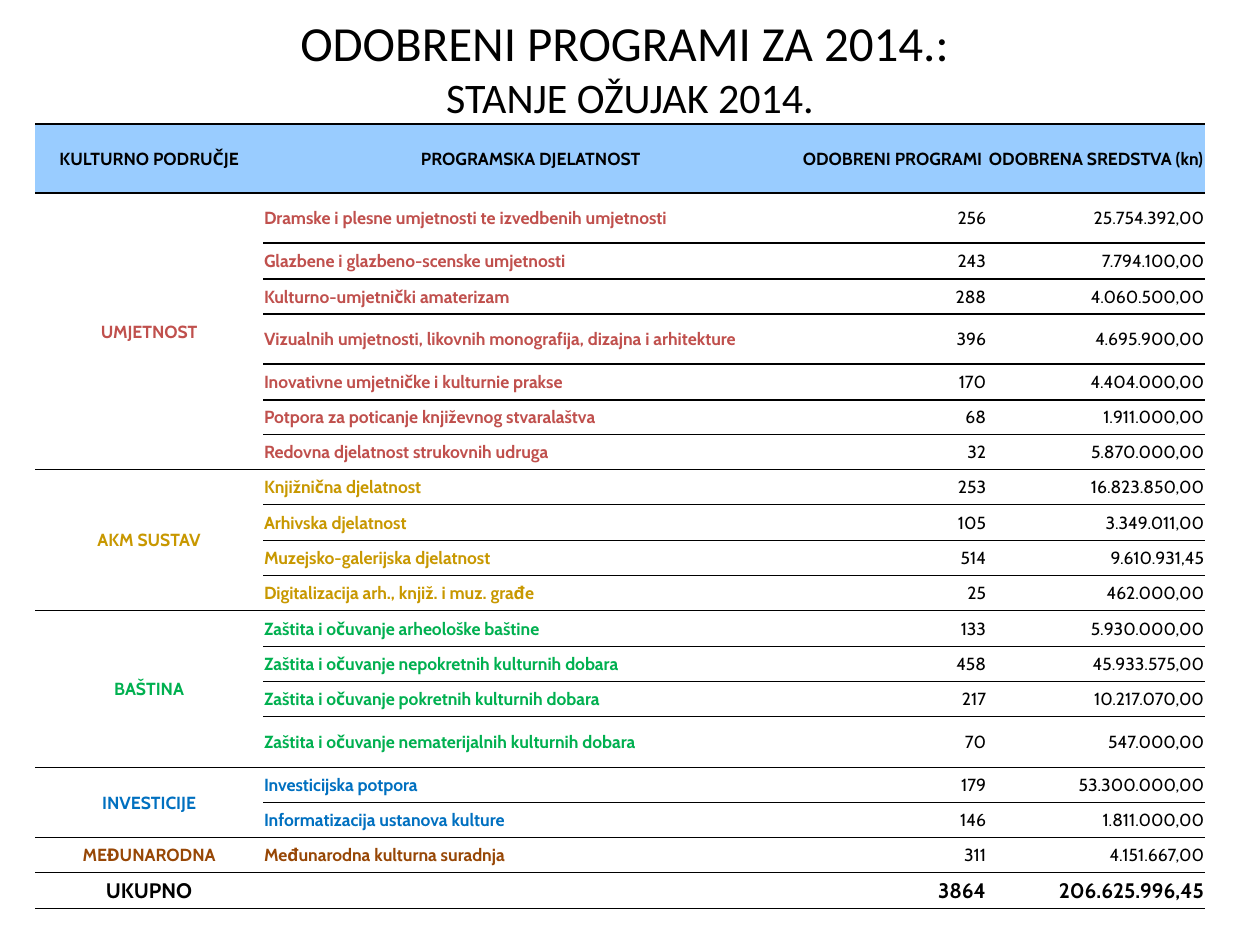
from lxml.etree import SubElement
from pptx import Presentation
from pptx.dml.color import RGBColor
from pptx.enum.text import MSO_ANCHOR as Anchor, MSO_AUTO_SIZE as AutoSize, PP_ALIGN as Align
from pptx.oxml.ns import qn
from pptx.util import Emu, Pt

EMU_PER_PX = 914400 / 126
COLORS = {
    "text": "000000", "header": "99CCFF", "art": "C0504D", "archive": "C89800",
    "heritage": "00B050", "investment": "0070C0", "international": "974706",
}
TITLE = [("ODOBRENI PROGRAMI ZA 2014.: ", 28), ("STANJE OŽUJAK 2014.", 24)]
HEADERS = ["KULTURNO PODRUČJE", "PROGRAMSKA DJELATNOST", "ODOBRENI PROGRAMI",
           "ODOBRENA SREDSTVA (kn)"]
# Area, colour, and its rows of activity, programmes and funds
AREAS = [
    ("UMJETNOST", "art", [
        ("Dramske i plesne umjetnosti te izvedbenih umjetnosti", "256", "25.754.392,00"),
        ("Glazbene i glazbeno-scenske umjetnosti", "243", "7.794.100,00"),
        ("Kulturno-umjetnički amaterizam", "288", "4.060.500,00"),
        ("Vizualnih umjetnosti, likovnih monografija, dizajna i arhitekture",
         "396", "4.695.900,00"),
        ("Inovativne umjetničke i kulturnie prakse", "170", "4.404.000,00"),
        ("Potpora za poticanje književnog stvaralaštva", "68", "1.911.000,00"),
        ("Redovna djelatnost strukovnih udruga", "32", "5.870.000,00"),
    ]),
    ("AKM SUSTAV", "archive", [
        ("Knjižnična djelatnost", "253", "16.823.850,00"),
        ("Arhivska djelatnost", "105", "3.349.011,00"),
        ("Muzejsko-galerijska djelatnost", "514", "9.610.931,45"),
        ("Digitalizacija arh., knjiž. i muz. građe", "25", "462.000,00"),
    ]),
    ("BAŠTINA", "heritage", [
        ("Zaštita i očuvanje arheološke baštine", "133", "5.930.000,00"),
        ("Zaštita i očuvanje nepokretnih kulturnih dobara", "458", "45.933.575,00"),
        ("Zaštita i očuvanje pokretnih kulturnih dobara", "217", "10.217.070,00"),
        ("Zaštita i očuvanje nematerijalnih kulturnih dobara", "70", "547.000,00"),
    ]),
    ("INVESTICIJE", "investment", [
        ("Investicijska potpora", "179", "53.300.000,00"),
        ("Informatizacija ustanova kulture", "146", "1.811.000,00"),
    ]),
    ("MEĐUNARODNA", "international", [
        ("Međunarodna kulturna suradnja", "311", "4.151.667,00"),
    ]),
]
TOTALS = ["UKUPNO", "", "3864", "206.625.996,45"]
COLUMN_EDGES = [35, 263, 798, 987, 1205]
ROW_EDGES = [124, 193, 243, 279, 314, 364, 400, 435, 470, 505, 541,
             576, 611, 647, 682, 717, 768, 803, 838, 873, 909]
ALIGNMENTS = [Align.CENTER, Align.LEFT, Align.RIGHT, Align.RIGHT]


def px(length):
    return Emu(round(length * EMU_PER_PX))


def gaps(edges):
    return [end - start for start, end in zip(edges, edges[1:])]


class SlideBuilder:
    title_font = "Calibri"
    table_font = "Cabin"

    def __init__(self, slide):
        self.slide = slide

    def set_text(self, paragraph, text, size, font, color="text", bold=False,
                 align=Align.CENTER):
        paragraph.text = text
        paragraph.alignment = align
        paragraph.font.name = font
        paragraph.font.size = Pt(size)
        paragraph.font.bold = bold
        paragraph.font.color.rgb = RGBColor.from_string(COLORS[color])

    def title(self, lines, left, top, width, height):
        box = self.slide.shapes.add_textbox(px(left), px(top), px(width), px(height))
        frame = box.text_frame
        frame.word_wrap = True
        frame.auto_size = AutoSize.SHAPE_TO_FIT_TEXT
        for index, (text, size) in enumerate(lines):
            paragraph = frame.add_paragraph() if index else frame.paragraphs[0]
            self.set_text(paragraph, text, size, self.title_font)

    def table(self, column_edges, row_edges):
        widths, heights = gaps(column_edges), gaps(row_edges)
        table = self.slide.shapes.add_table(
            len(heights), len(widths), px(column_edges[0]), px(row_edges[0]),
            px(sum(widths)), px(sum(heights))).table
        table.first_row = table.horz_banding = False
        for column, width in zip(table.columns, widths):
            column.width = px(width)
        for row, height in zip(table.rows, heights):
            row.height = px(height)
        return table

    def borders(self, cell):
        properties = cell._tc.get_or_add_tcPr()
        for side in ("lnL", "lnR", "lnT", "lnB"):
            line = SubElement(properties, qn(f"a:{side}"), w=str(int(Pt(1))))
            if side in ("lnL", "lnR"):
                SubElement(line, qn("a:noFill"))
            else:
                fill = SubElement(line, qn("a:solidFill"))
                SubElement(fill, qn("a:srgbClr"), val=COLORS["text"])

    def cell(self, cell, text, align, color="text", bold=True, size=10, fill=None):
        self.borders(cell)
        if fill:
            cell.fill.solid()
            cell.fill.fore_color.rgb = RGBColor.from_string(COLORS[fill])
        else:
            cell.fill.background()
        cell.margin_left = cell.margin_right = cell.margin_top = px(1)
        cell.margin_bottom = 0
        cell.vertical_anchor = Anchor.MIDDLE
        self.set_text(cell.text_frame.paragraphs[0], text, size, self.table_font,
                      color, bold, align)


def main():
    presentation = Presentation()
    presentation.slide_width, presentation.slide_height = px(1260), px(945)
    builder = SlideBuilder(presentation.slides.add_slide(presentation.slide_layouts[6]))

    # Title
    builder.title(TITLE, 15, 6, 1230, 123)

    # Header row
    table = builder.table(COLUMN_EDGES, ROW_EDGES)
    for column, text in enumerate(HEADERS):
        builder.cell(table.cell(0, column), text, Align.CENTER, fill="header")

    # Areas, each with one cell spanning its activities
    row = 1
    for area, color, activities in AREAS:
        last = row + len(activities) - 1
        if last > row:
            table.cell(row, 0).merge(table.cell(last, 0))
        builder.cell(table.cell(row, 0), area, Align.CENTER, color)
        for values in activities:
            for column, text in enumerate(values, start=1):
                is_name = column == 1
                builder.cell(table.cell(row, column), text, ALIGNMENTS[column],
                             color if is_name else "text", bold=is_name)
            row += 1

    # Totals row
    for column, text in enumerate(TOTALS):
        builder.cell(table.cell(row, column), text, ALIGNMENTS[column], size=12)

    presentation.save("out.pptx")


if __name__ == "__main__":
    main()
